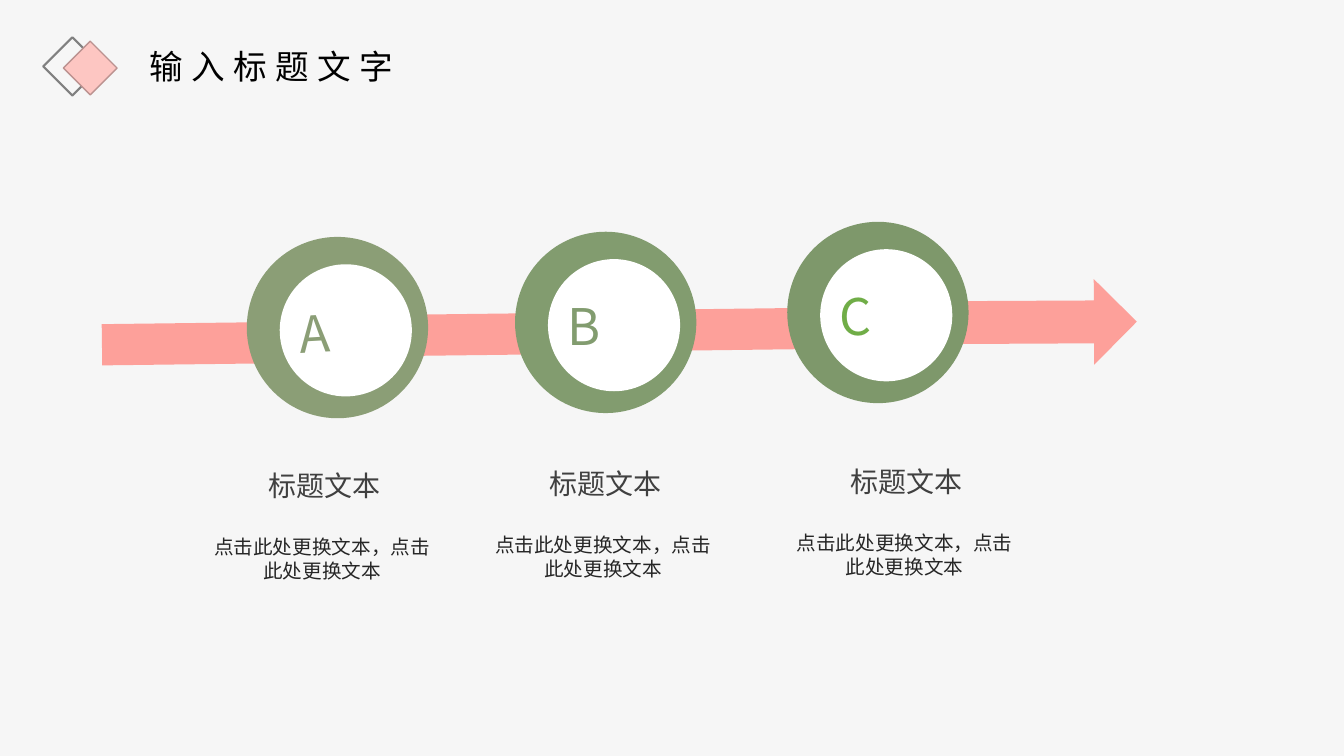
from dataclasses import dataclass

from lxml import etree
from pptx import Presentation
from pptx.dml.color import RGBColor
from pptx.enum.shapes import MSO_SHAPE
from pptx.enum.text import MSO_ANCHOR, MSO_AUTO_SIZE, PP_ALIGN
from pptx.oxml.ns import qn
from pptx.util import Cm, Pt

RECTANGLE, ARROW = MSO_SHAPE.RECTANGLE, MSO_SHAPE.RIGHT_ARROW
DIAMOND, OVAL = MSO_SHAPE.DIAMOND, MSO_SHAPE.OVAL
LEFT, CENTER = PP_ALIGN.LEFT, PP_ALIGN.CENTER
TOP, MIDDLE = MSO_ANCHOR.TOP, MSO_ANCHOR.MIDDLE


@dataclass(frozen=True)
class Theme:
    font: str = "Noto Sans CJK SC"
    background: str = "F6F6F6"
    band: str = "FDA09A"
    disc: str = "FFFFFF"
    outline: str = "808080"
    blush: str = "FDC6C2"
    blush_line: str = "BB9290"
    title: str = "000000"
    heading: str = "404040"
    body: str = "262626"
    title_size: int = 24
    letter_size: int = 36
    heading_size: int = 20
    body_size: int = 14
    leading: float = 1.2


theme = Theme()

# Content: all lengths in centimetres
TITLE = "输入标题文字"
HEADING = "标题文本"
BODY = "点击此处更换文本，点击此处更换文本"

# letter, ring colour, letter colour, ring corner, caption corner, disc rotation
STEPS = [
    ("A", "8B9E76", "8B9E76", (6.22, 5.97), (5.11, 13.49), 356.7),
    ("B", "829C6F", "829C6F", (12.98, 5.84), (12.19, 13.44), 0),
    ("C", "7E986B", "70AD47", (19.84, 5.59), (19.79, 13.39), 0),
]
# preset, box, rotation
BANDS = [
    (ARROW, (23.27, 7.04, 5.38, 2.16), 359.7),
    (RECTANGLE, (17.2, 7.77, 4.17, 1.04), 359.3),
    (RECTANGLE, (10.08, 7.9, 5.59, 1.04), 359.3),
    (RECTANGLE, (2.57, 8.13, 6.38, 1.04), 359.3),
]
# box, fill, line colour, line width
DIAMONDS = [
    ((1.09, 0.94, 1.47, 1.47), None, theme.outline, 1.5),
    ((1.6, 1.04, 1.35, 1.35), theme.blush, theme.blush_line, 1),
]
TITLE_BOX = (3.51, 1.04, 9.14, 1.27)
RING, DISC = 4.57, 3.33
DISC_OFFSET = (0.83, 0.69)
BODY_SIZE = (6.02, 2.97)
HEADING_SIZE = (3.35, 1.12)
HEADING_OFFSET = (1.4, -1.81)
NO_INSET = {"margin_left": 0, "margin_top": 0, "margin_right": 0, "margin_bottom": 0}


def color(value):
    return RGBColor.from_string(value)


def shifted(corner, offset):
    return corner[0] + offset[0], corner[1] + offset[1]


def add_shape(slide, preset, box, fill=None, line=None, width=1, rotation=0):
    shape = slide.shapes.add_shape(preset, *map(Cm, box))
    shape.shadow.inherit = False
    shape.rotation = rotation
    if fill:
        shape.fill.solid()
        shape.fill.fore_color.rgb = color(fill)
    else:
        shape.fill.background()
    if line:
        shape.line.color.rgb = color(line)
        shape.line.width = Pt(width)
    else:
        shape.line.fill.background()
    return shape


def write(shape, text, size, ink, alignment=LEFT, leading=None, spacing=None, **frame_format):
    frame = shape.text_frame
    formats = {"auto_size": MSO_AUTO_SIZE.NONE, "word_wrap": True,
               "vertical_anchor": TOP, **frame_format}
    for name, value in formats.items():
        setattr(frame, name, value)
    paragraph = frame.paragraphs[0]
    paragraph.alignment = alignment
    if leading:
        paragraph.line_spacing = Pt(size * leading)
    run = paragraph.add_run()
    run.text = text
    for name, value in {"name": theme.font, "size": Pt(size), "bold": False}.items():
        setattr(run.font, name, value)
    run.font.color.rgb = color(ink)
    properties = run._r.get_or_add_rPr()
    etree.SubElement(properties, qn("a:ea")).set("typeface", theme.font)
    if spacing:
        properties.set("spc", str(spacing * 100))


def add_title(slide):
    title = slide.shapes.title
    for name, value in zip(("left", "top", "width", "height"), TITLE_BOX):
        setattr(title, name, Cm(value))
    write(title, TITLE, theme.title_size, theme.title, leading=theme.leading, spacing=6)


def add_step(slide, letter, ring_color, letter_color, corner, rotation):
    add_shape(slide, OVAL, (*corner, RING, RING), ring_color)
    disc = add_shape(slide, OVAL, (*shifted(corner, DISC_OFFSET), DISC, DISC),
                     theme.disc, rotation=rotation)
    write(disc, letter, theme.letter_size, letter_color, vertical_anchor=MIDDLE,
          **{**NO_INSET, "margin_right": Cm(0.3)})


def add_caption(slide, corner):
    body = slide.shapes.add_textbox(*map(Cm, (*corner, *BODY_SIZE)))
    write(body, BODY, theme.body_size, theme.body, CENTER, theme.leading,
          margin_top=0, margin_bottom=0)
    heading_corner = shifted(corner, HEADING_OFFSET)
    heading = slide.shapes.add_textbox(*map(Cm, (*heading_corner, *HEADING_SIZE)))
    write(heading, HEADING, theme.heading_size, theme.heading,
          leading=theme.leading, word_wrap=False)


def main():
    presentation = Presentation()
    presentation.slide_width, presentation.slide_height = Cm(33.87), Cm(19.05)
    slide = presentation.slides.add_slide(presentation.slide_layouts[5])
    slide.background.fill.solid()
    slide.background.fill.fore_color.rgb = color(theme.background)

    # Header
    add_title(slide)
    for box, fill, line, width in DIAMONDS:
        add_shape(slide, DIAMOND, box, fill, line, width)

    # Arrow band behind the steps
    for preset, box, rotation in BANDS:
        add_shape(slide, preset, box, theme.band, rotation=rotation)

    # Steps with their captions
    for letter, ring_color, letter_color, corner, caption_corner, rotation in STEPS:
        add_step(slide, letter, ring_color, letter_color, corner, rotation)
        add_caption(slide, caption_corner)

    presentation.save("out.pptx")


if __name__ == "__main__":
    main()
